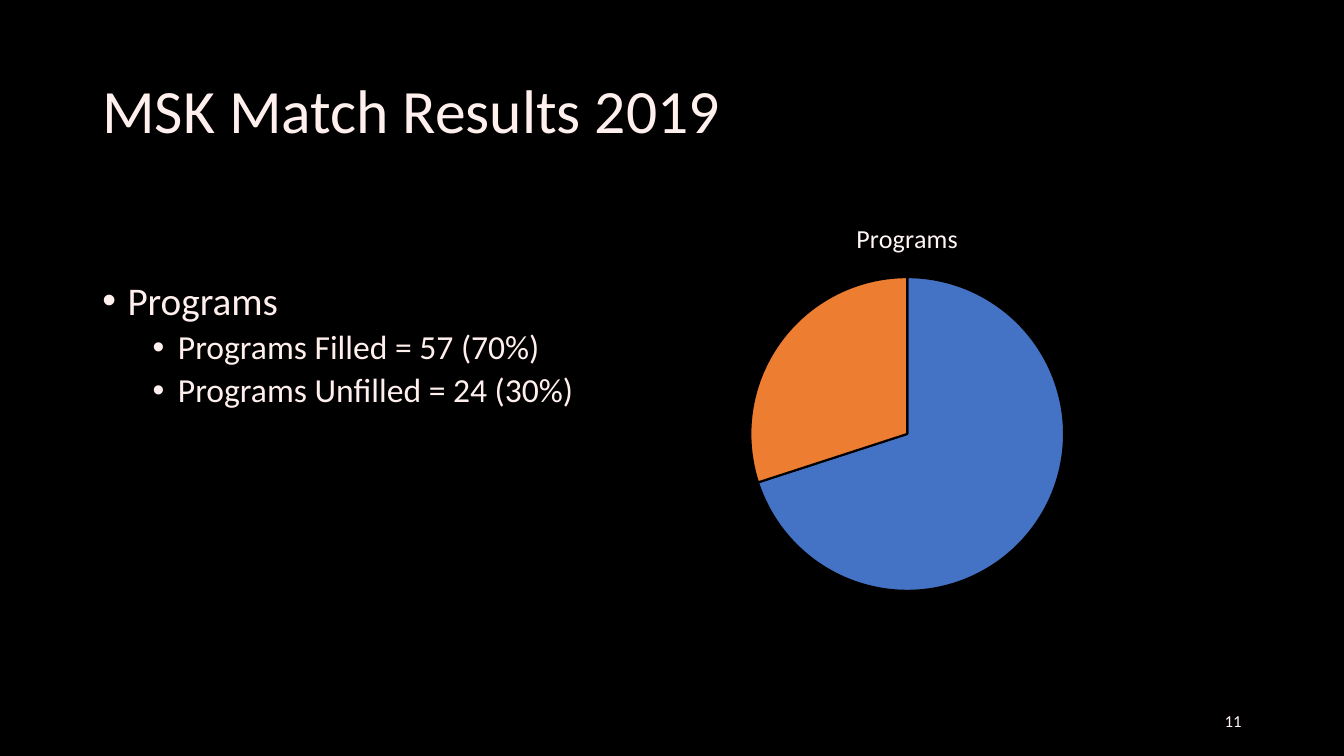
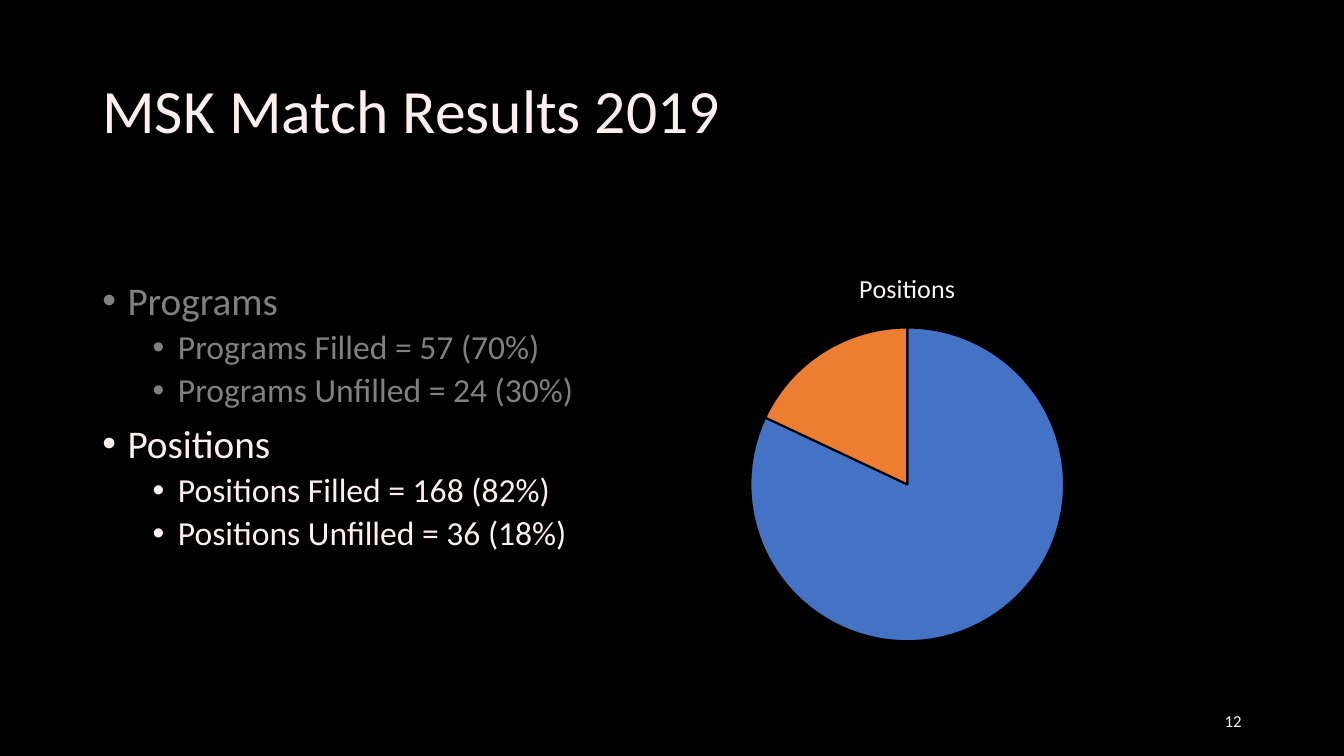
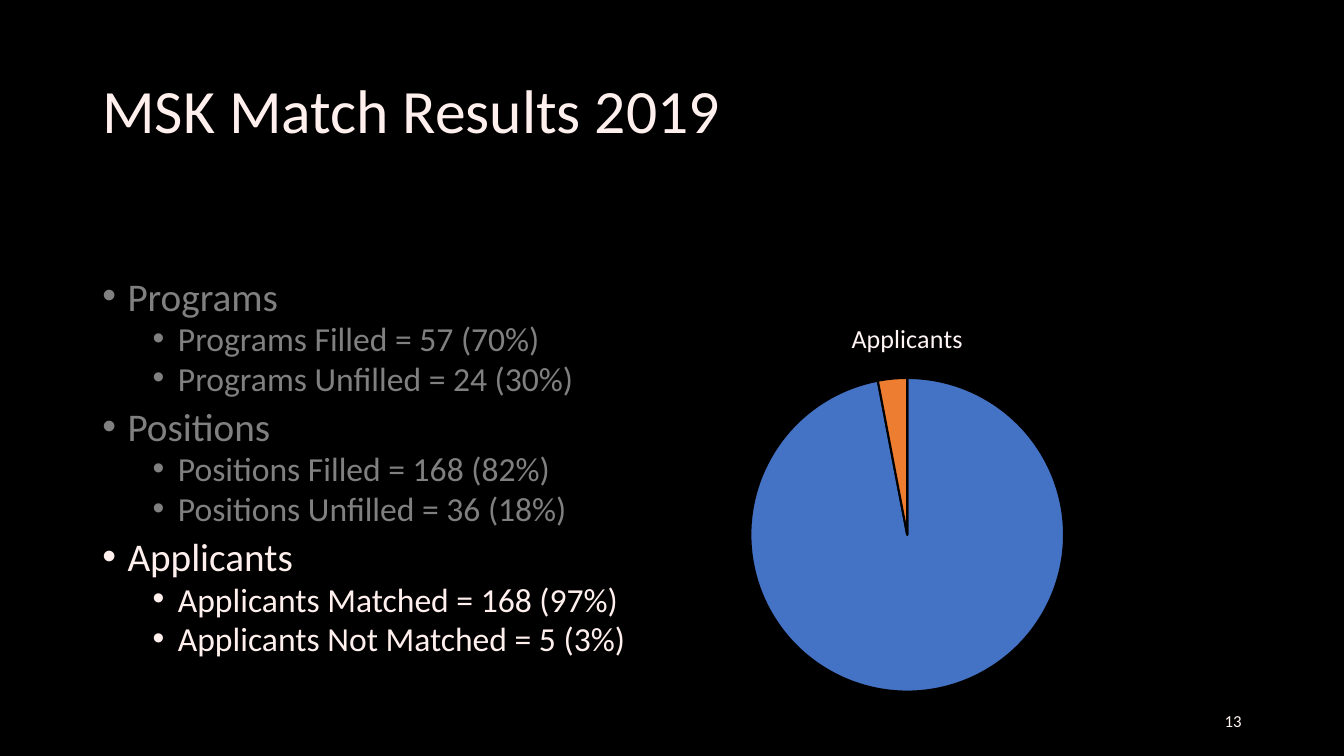
from lxml.etree import SubElement
from pptx import Presentation
from pptx.chart.data import CategoryChartData as PieData
from pptx.dml.color import RGBColor as RGB
from pptx.enum.chart import XL_CHART_TYPE as Kind
from pptx.enum.text import MSO_ANCHOR as Anchor, PP_ALIGN as Align
from pptx.oxml.ns import qn
from pptx.util import Inches, Pt

TITLE = "MSK Match Results 2019"
FIRST = 11
TOPICS = [
    ("Programs", ["Programs Filled = 57 (70%)", "Programs Unfilled = 24 (30%)"], (70, 30)),
    ("Positions", ["Positions Filled = 168 (82%)", "Positions Unfilled = 36 (18%)"], (82, 18)),
    ("Applicants", ["Applicants Matched = 168 (97%)", "Applicants Not Matched = 5 (3%)"], (97, 3)),
]
TIGHT = [0.9, 0.9, 0.8]

FONT = "Calibri"
HUES = {"back": "000000", "text": "FFF0EE", "dim": "808080", "page": "FFF4F2",
        "head": "FFF5F4", "main": "4472C4", "rest": "ED7D31"}
LEVELS = [(28, 10, 0.25), (24, 5, 0.75)]

COLS, ROWS = 160, 90
HEAD = (11, 4.8, 138, 17.4)
BODY = (11, 32.9, 67.7, 48.4)
PAGE = (113, 83.4, 36, 4.8)
PIE = (72, 24, 72, 48)
DROP = 6

deck = Presentation()
deck.slide_width, deck.slide_height = Inches(13.333), Inches(7.5)


def place(area):
    wide, high = deck.slide_width / COLS, deck.slide_height / ROWS
    return [round(n * unit) for n, unit in zip(area, (wide, high, wide, high))]


def style(font, size, hue):
    font.name, font.size, font.bold = FONT, Pt(size), False
    font.color.rgb = RGB.from_string(HUES[hue])


def paint(fill, hue):
    fill.solid()
    fill.fore_color.rgb = RGB.from_string(HUES[hue])


def add_box(slide, area, anchor):
    frame = slide.shapes.add_textbox(*place(area)).text_frame
    frame.word_wrap = True
    frame.vertical_anchor = anchor
    return frame


def add_line(slide, area, text, size, hue, align, space=1.0):
    para = add_box(slide, area, Anchor.MIDDLE).paragraphs[0]
    para.text, para.alignment, para.line_spacing = text, align, space
    style(para.font, size, hue)


def add_list(slide, topics, space):
    frame = add_box(slide, BODY, Anchor.TOP)
    rows = [(text, level, "text" if topic is topics[-1] else "dim")
            for topic in topics
            for text, level in [(topic[0], 0)] + [(item, 1) for item in topic[1]]]
    for i, (text, level, hue) in enumerate(rows):
        para = frame.add_paragraph() if i else frame.paragraphs[0]
        size, before, indent = LEVELS[level]
        para.text, para.level = text, level
        para.line_spacing, para.space_before = space, Pt(before)
        style(para.font, size, hue)
        props = para._p.get_or_add_pPr()
        props.set("marL", str(Inches(indent)))
        props.set("indent", str(Inches(-0.25)))
        SubElement(props, qn("a:buFont")).set("typeface", "Arial")
        SubElement(props, qn("a:buChar")).set("char", "\u2022")
        props.append(props.find(qn("a:defRPr")))


def add_pie(slide, name, values, step):
    data = PieData()
    data.categories = ["1", "2"]
    data.add_series(name, values)
    left, top, wide, high = PIE
    area = place((left, top + step * DROP, wide, high))
    chart = slide.shapes.add_chart(Kind.PIE, *area, data).chart
    style(chart.font, 10, "text")
    chart.has_legend = False
    chart.has_title = True
    title = chart.chart_title
    title.include_in_layout = False
    para = title.text_frame.paragraphs[0]
    para.text = name
    style(para.font, 18.6, "head")
    style(para.runs[0].font, 18.6, "head")
    plot = chart.plots[0]
    plot.vary_by_categories = True
    for i, hue in enumerate(("main", "rest")):
        look = plot.series[0].points[i].format
        paint(look.fill, hue)
        paint(look.line.fill, "back")
        look.line.width = Pt(1.5)


for step, (name, items, values) in enumerate(TOPICS):
    slide = deck.slides.add_slide(deck.slide_layouts[6])
    paint(slide.background.fill, "back")
    add_line(slide, HEAD, TITLE, 44, "text", Align.LEFT, 0.9)
    add_list(slide, TOPICS[:step + 1], TIGHT[step])
    add_line(slide, PAGE, str(FIRST + step), 12, "page", Align.RIGHT)
    add_pie(slide, name, values, step)

deck.save("out.pptx")
